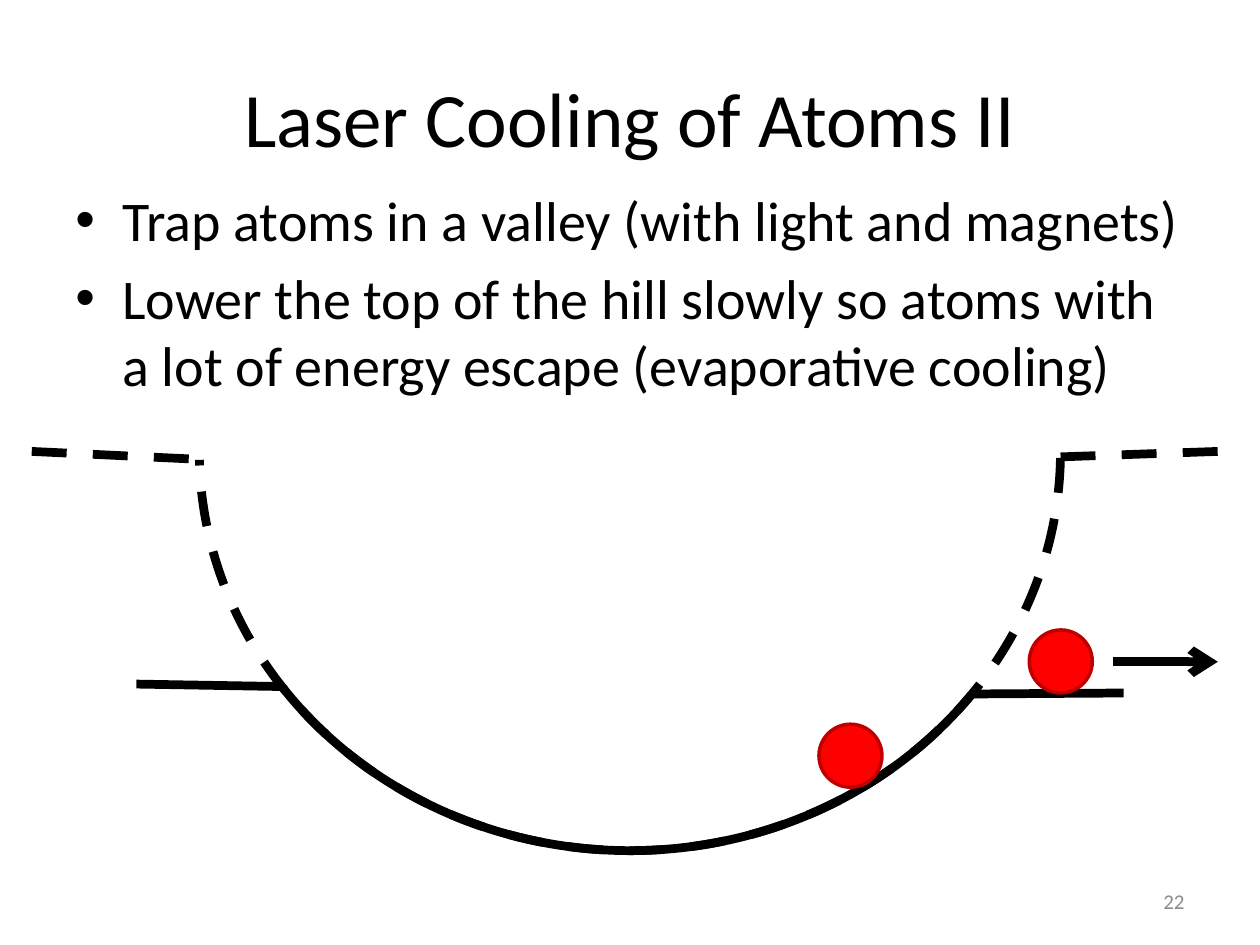
from dataclasses import dataclass

import lxml.etree
import pptx
import pptx.dml.color
import pptx.enum.dml
import pptx.enum.shapes
import pptx.enum.text
import pptx.oxml.ns
import pptx.presentation
import pptx.shapes.autoshape
import pptx.slide
import pptx.util
from pptx.util import Cm, Pt

COLORS = {"ink": "000000", "atom": "FF0000", "atom_edge": "C00000", "number": "8C8C8C"}
FONT = "Calibri"
WALL_WIDTH = 5
ATOM_SIZE = 1.27
VALLEY = (4.02, 1.06, 17.36, 16.09)
PP_ALIGN = pptx.enum.text.PP_ALIGN
ANCHOR = pptx.enum.text.MSO_ANCHOR


@dataclass
class TextBlock:
    box: tuple[float, float, float, float]
    paragraphs: list[str]
    size: float
    color: str = "ink"
    align: PP_ALIGN = PP_ALIGN.LEFT
    anchor: ANCHOR = ANCHOR.MIDDLE
    bulleted: bool = False


@dataclass
class ValleyArc:
    """Part of the valley outline, in degrees clockwise from the right."""
    start: float
    end: float
    dashed: bool = False


@dataclass
class Segment:
    start: tuple[float, float]
    end: tuple[float, float]
    dashed: bool = False
    arrow: bool = False


@dataclass
class Atom:
    left: float
    top: float


TEXTS = [
    TextBlock((1.27, 0.76, 22.86, 3.18), ["Laser Cooling of Atoms II"], 44,
              align=PP_ALIGN.CENTER),
    TextBlock((1.27, 3.61, 22.86, 12.57),
              ["Trap atoms in a valley (with light and magnets)",
               "Lower the top of the hill slowly so atoms with a lot of energy "
               "escape (evaporative cooling)"],
              32, anchor=ANCHOR.TOP, bulleted=True),
]
SLIDE_NUMBER = TextBlock((18.2, 17.65, 5.93, 1.02), ["22"], 12, "number", PP_ALIGN.RIGHT)
ARCS = [ValleyArc(0.85, 178.9, dashed=True), ValleyArc(35.43, 145.82)]
TRAPPED_ATOM = Atom(16.51, 14.6)
ESCAPING_ATOM = Atom(20.75, 12.7)
HILLTOPS = [
    Segment((21.38, 9.21), (24.55, 9.1), dashed=True),
    Segment((0.64, 9.1), (4.02, 9.26), dashed=True),
    Segment((19.58, 13.99), (22.65, 13.97)),
    Segment((2.75, 13.79), (5.69, 13.84)),
]
ESCAPE_ARROW = Segment((22.44, 13.34), (24.55, 13.34), arrow=True)


def rgb(name: str) -> pptx.dml.color.RGBColor:
    return pptx.dml.color.RGBColor.from_string(COLORS[name])


def add_child(parent: lxml.etree._Element, tag: str, **attributes: str) -> None:
    lxml.etree.SubElement(parent, pptx.oxml.ns.qn(tag), attributes)


def style_wall(shape, dashed: bool) -> None:
    shape.line.color.rgb = rgb("ink")
    shape.line.width = Pt(WALL_WIDTH)
    if dashed:
        shape.line.dash_style = pptx.enum.dml.MSO_LINE.DASH


def add_text(slide: pptx.slide.Slide, block: TextBlock) -> None:
    frame = slide.shapes.add_textbox(*map(Cm, block.box)).text_frame
    frame.word_wrap = True
    frame.vertical_anchor = block.anchor
    for index, wording in enumerate(block.paragraphs):
        paragraph = frame.add_paragraph() if index else frame.paragraphs[0]
        paragraph.alignment = block.align
        if block.bulleted:
            paragraph.space_before = Pt(block.size * 0.2)
            properties = paragraph._p.get_or_add_pPr()
            properties.set("marL", str(Cm(0.95)))
            properties.set("indent", str(-Cm(0.95)))
            add_child(properties, "a:buFont", typeface="Arial")
            add_child(properties, "a:buChar", char="•")
        run = paragraph.add_run()
        run.text = wording
        run.font.name = FONT
        run.font.size = Pt(block.size)
        run.font.color.rgb = rgb(block.color)


def add_arc(slide: pptx.slide.Slide, arc: ValleyArc) -> None:
    shape = slide.shapes.add_shape(pptx.enum.shapes.MSO_SHAPE.ARC, *map(Cm, VALLEY))
    # Angles are stored in 60000ths of a degree, adjustments in 100000ths.
    shape.adjustments[0] = arc.start * 0.6
    shape.adjustments[1] = arc.end * 0.6
    shape.shadow.inherit = False
    shape.fill.background()
    style_wall(shape, arc.dashed)


def add_atom(slide: pptx.slide.Slide, atom: Atom) -> None:
    ball = slide.shapes.add_shape(pptx.enum.shapes.MSO_SHAPE.OVAL, Cm(atom.left), Cm(atom.top),
                                  Cm(ATOM_SIZE), Cm(ATOM_SIZE))
    ball.shadow.inherit = False
    ball.fill.solid()
    ball.fill.fore_color.rgb = rgb("atom")
    ball.line.color.rgb = rgb("atom_edge")
    ball.line.width = Pt(2)


def add_segment(slide: pptx.slide.Slide, segment: Segment) -> None:
    connector = slide.shapes.add_connector(pptx.enum.shapes.MSO_CONNECTOR.STRAIGHT,
                                           *map(Cm, segment.start + segment.end))
    style_wall(connector, segment.dashed)
    if segment.arrow:
        add_child(connector.line._get_or_add_ln(), "a:tailEnd", type="arrow")
    add_child(connector._element.spPr, "a:effectLst")


def build() -> pptx.presentation.Presentation:
    deck = pptx.Presentation()
    deck.slide_width, deck.slide_height = Cm(25.4), Cm(19.05)
    slide = deck.slides.add_slide(deck.slide_layouts[6])
    for block in TEXTS:
        add_text(slide, block)
    for arc in ARCS:
        add_arc(slide, arc)
    add_atom(slide, TRAPPED_ATOM)
    for hilltop in HILLTOPS:
        add_segment(slide, hilltop)
    add_atom(slide, ESCAPING_ATOM)
    add_segment(slide, ESCAPE_ARROW)
    add_text(slide, SLIDE_NUMBER)
    return deck


if __name__ == "__main__":
    build().save("out.pptx")
